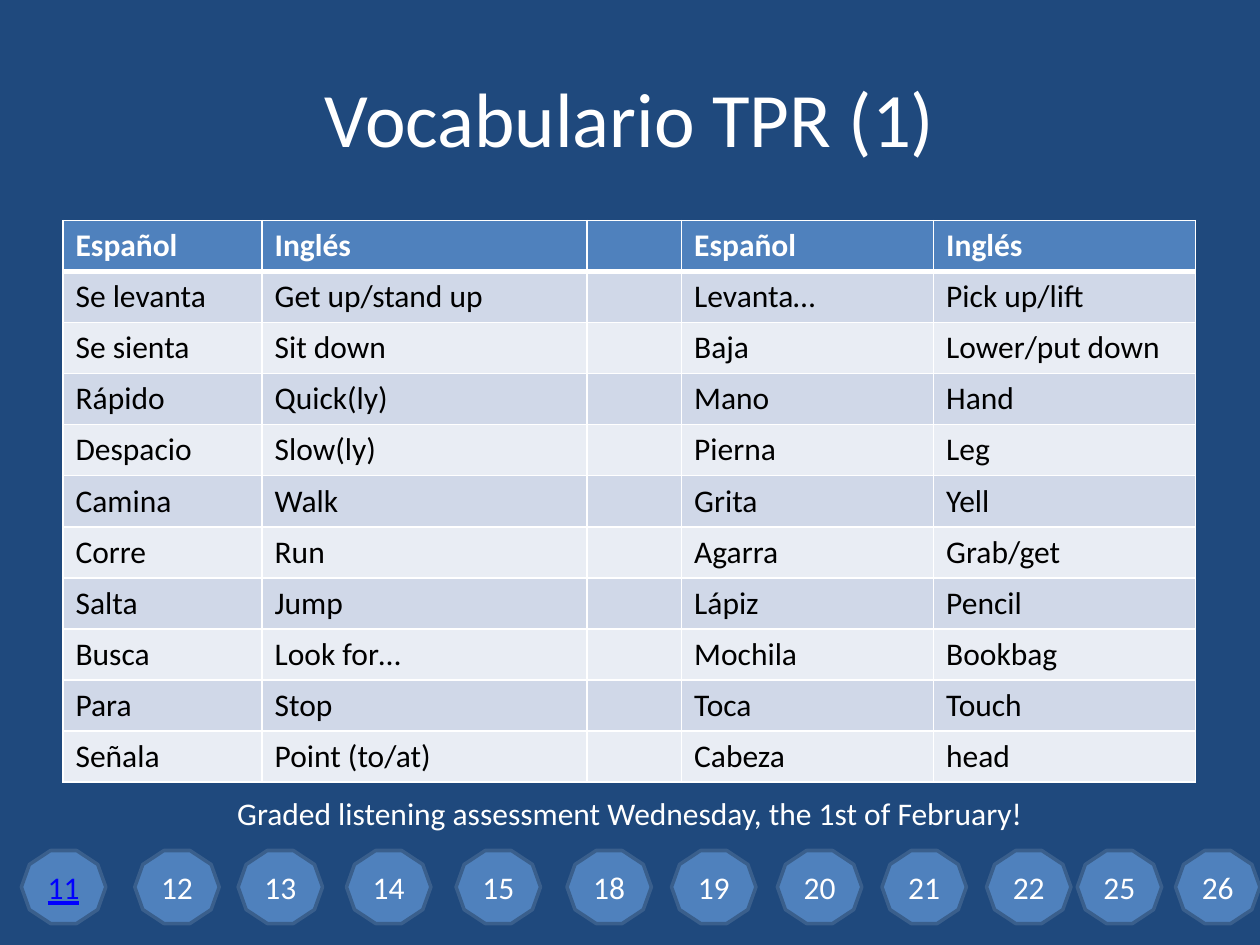
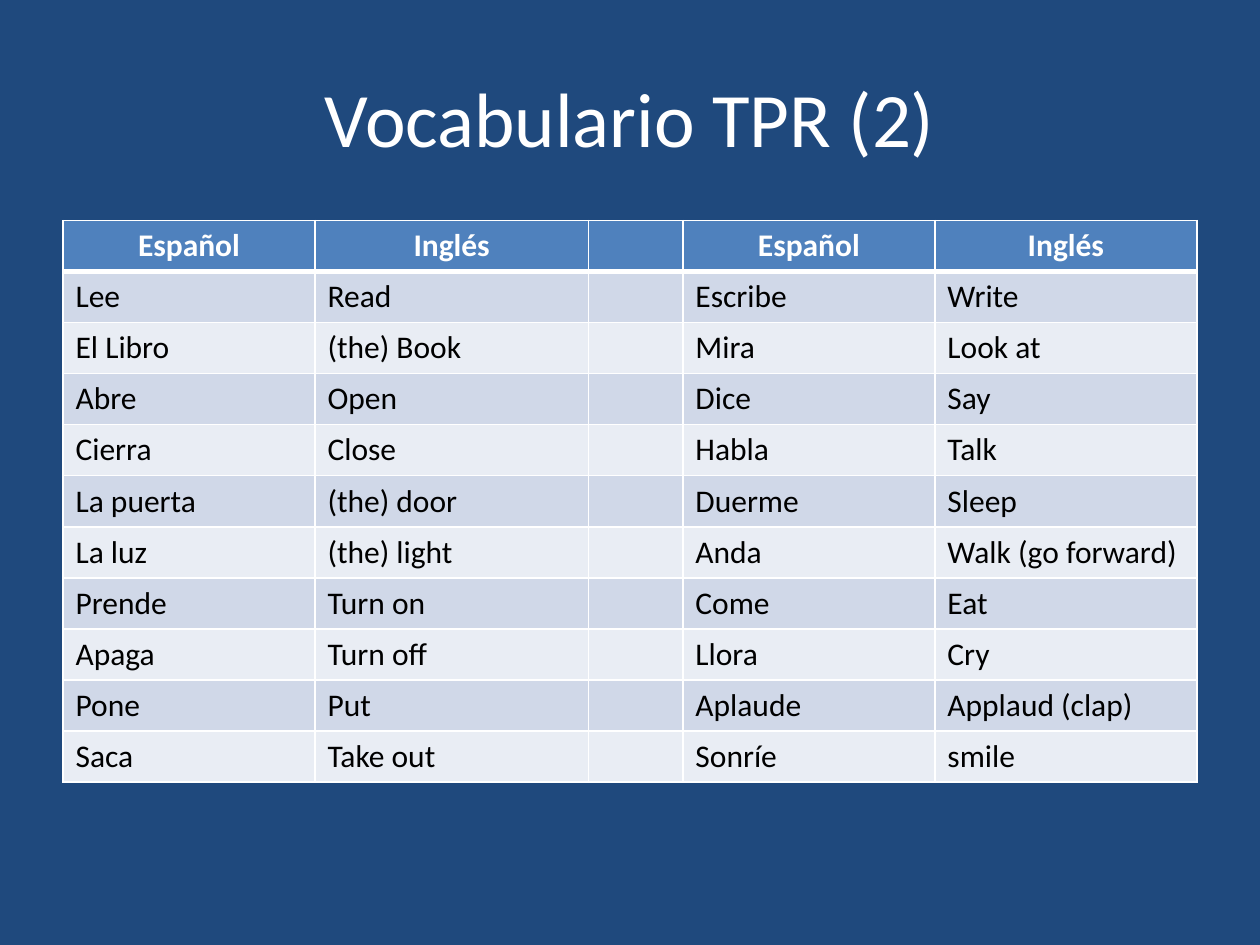
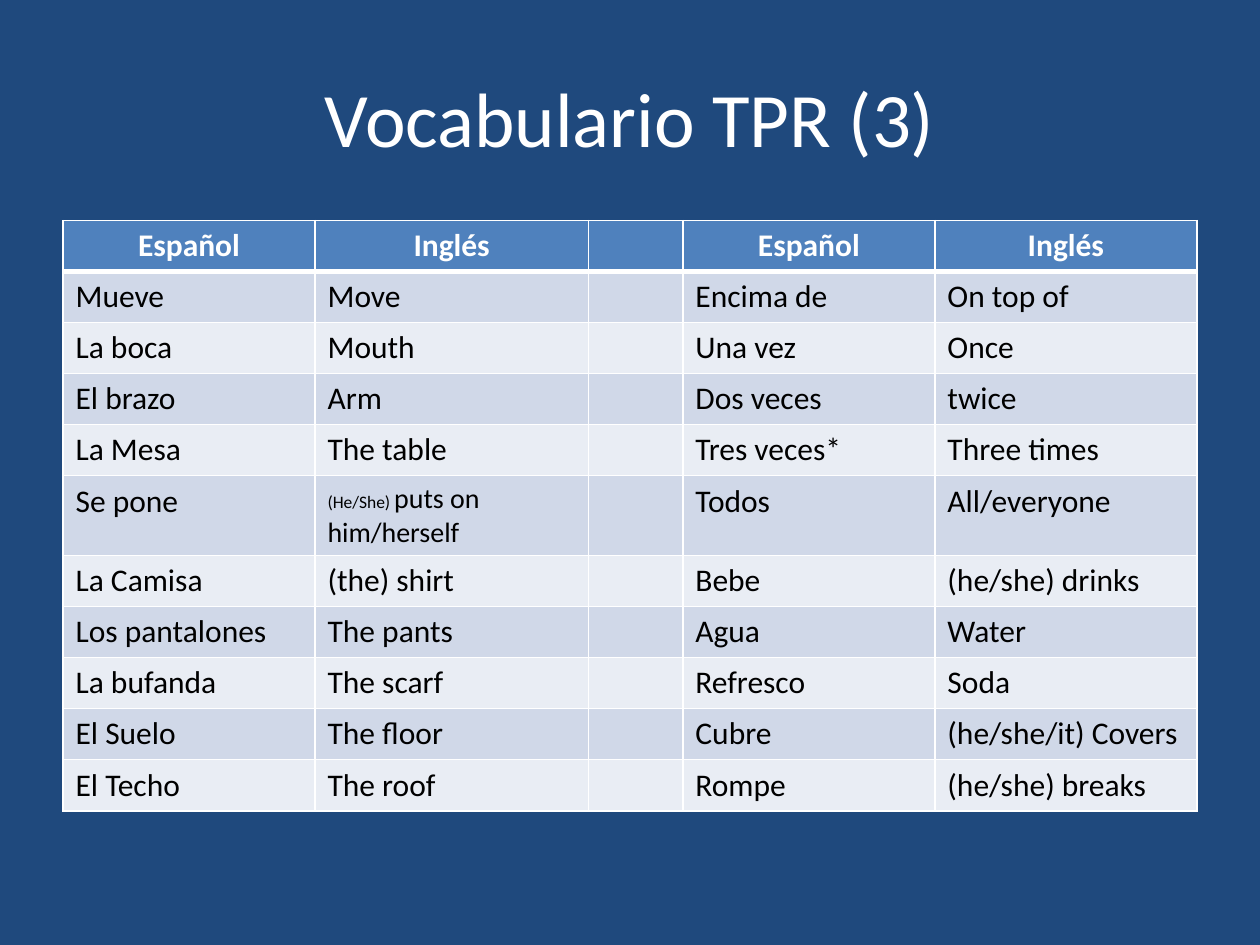
from lxml import etree
from pptx import Presentation
from pptx.dml.color import RGBColor
from pptx.enum.shapes import MSO_SHAPE
from pptx.enum.text import MSO_ANCHOR, PP_ALIGN
from pptx.oxml.ns import qn
from pptx.util import Inches, Pt

DECAGON = MSO_SHAPE.DECAGON
CENTER, LEFT = PP_ALIGN.CENTER, PP_ALIGN.LEFT
MIDDLE, TOP = MSO_ANCHOR.MIDDLE, MSO_ANCHOR.TOP

COLORS = {
    "back": "1F497D", "white": "FFFFFF", "black": "000000", "blue": "4F81BD",
    "edge": "3A5F8C", "link": "0000FF", "odd": "D0D8E8", "even": "E9EDF4",
}
FORMATS = {
    "title": {"size": Pt(44), "color": "white"},
    "note": {"size": Pt(18), "color": "white"},
    "head": {"size": Pt(18), "color": "white", "bold": True},
    "body": {"size": Pt(18), "color": "black", "bold": False},
    "link": {"size": Pt(18), "color": "link", "underline": True},
}
HEADS = ("Español", "Inglés", "", "Español", "Inglés")

BADGES = {
    "11": 0.17, "12": 1.07, "13": 1.89, "14": 2.75, "15": 3.62, "18": 4.5,
    "19": 5.33, "20": 6.17, "21": 7, "22": 7.83, "25": 8.55, "26": 9.33,
}

# Each word row: Spanish, English, Spanish, English.
# A cell may also be a list of (text, points) runs.
LESSONS = [
    {"title": "Vocabulario TPR (1)", "cols": (1.58, 2.58, 0.75, 2, 2.08), "align": LEFT, "words": [
        ("Se levanta", "Get up/stand up", "Levanta…", "Pick up/lift"),
        ("Se sienta", "Sit down", "Baja", "Lower/put down"),
        ("Rápido", "Quick(ly)", "Mano", "Hand"),
        ("Despacio", "Slow(ly)", "Pierna", "Leg"),
        ("Camina", "Walk", "Grita", "Yell"),
        ("Corre", "Run", "Agarra", "Grab/get"),
        ("Salta", "Jump", "Lápiz", "Pencil"),
        ("Busca", "Look for…", "Mochila", "Bookbag"),
        ("Para", "Stop", "Toca", "Touch"),
        ("Señala", "Point (to/at)", "Cabeza", "head"),
    ]},
    {"title": "Vocabulario TPR (2)", "cols": (2, 2.17, 0.75, 2, 2.08), "align": CENTER, "words": [
        ("Lee", "Read", "Escribe", "Write"),
        ("El Libro", "(the) Book", "Mira", "Look at"),
        ("Abre", "Open", "Dice", "Say"),
        ("Cierra", "Close", "Habla", "Talk"),
        ("La puerta", "(the) door", "Duerme", "Sleep"),
        ("La luz", "(the) light", "Anda", "Walk (go forward)"),
        ("Prende", "Turn on", "Come", "Eat"),
        ("Apaga", "Turn off", "Llora", "Cry"),
        ("Pone", "Put", "Aplaude", "Applaud (clap)"),
        ("Saca", "Take out", "Sonríe", "smile"),
    ]},
    {"title": "Vocabulario TPR (3)", "cols": (2, 2.17, 0.75, 2, 2.08), "align": CENTER, "words": [
        ("Mueve", "Move", "Encima de", "On top of"),
        ("La boca", "Mouth", "Una vez", "Once"),
        ("El brazo", "Arm", "Dos veces", "twice"),
        ("La Mesa", "The table", "Tres veces*", "Three times"),
        ("Se pone", [("(He/She) ", 10), ("puts on him/herself", 16)], "Todos", "All/everyone"),
        ("La Camisa", "(the) shirt", "Bebe", "(he/she) drinks"),
        ("Los pantalones", "The pants", "Agua", "Water"),
        ("La bufanda", "The scarf", "Refresco", "Soda"),
        ("El Suelo", "The floor", "Cubre", "(he/she/it) Covers"),
        ("El Techo", "The roof", "Rompe", "(he/she) breaks"),
    ]},
]


def rgb(name):
    return RGBColor.from_string(COLORS[name])


def paint(fill, name):
    fill.solid()
    fill.fore_color.rgb = rgb(name)


class Deck:
    """Holds the shared style and the slide being built."""

    font = "Calibri"

    def __init__(self):
        self.prs = Presentation()
        self.prs.slide_width, self.prs.slide_height = Inches(10), Inches(7.5)
        self.slide = None

    def page(self):
        self.slide = self.prs.slides.add_slide(self.prs.slide_layouts[6])
        paint(self.slide.background.fill, "back")

    def set_text(self, frame, text, style, align=CENTER):
        """Fill a text frame with one paragraph of one or more runs."""
        para = frame.paragraphs[0]
        para.alignment = align
        runs = [(text, None)] if isinstance(text, str) else text
        for part, size in runs:
            if not part:
                continue
            run = para.add_run()
            run.text = part
            run.font.name = self.font
            for key, value in FORMATS[style].items():
                if key == "color":
                    run.font.color.rgb = rgb(value)
                else:
                    setattr(run.font, key, value)
            if size:
                run.font.size = Pt(size)

    def label(self, text, style, top, height, anchor):
        box = self.slide.shapes.add_textbox(Inches(0.5), Inches(top), Inches(9), Inches(height))
        frame = box.text_frame
        frame.word_wrap = True
        frame.vertical_anchor = anchor
        self.set_text(frame, text, style)

    def badge(self, text, left, style):
        shape = self.slide.shapes.add_shape(
            DECAGON, Inches(left), Inches(6.75), Inches(0.67), Inches(0.58))
        shape.shadow.inherit = False
        paint(shape.fill, "blue")
        shape.line.color.rgb = rgb("edge")
        shape.line.width = Pt(2)
        shape.text_frame.vertical_anchor = MIDDLE
        self.set_text(shape.text_frame, text, style)

    def border(self, cell, top, bottom):
        """Draw white cell edges; top and bottom are widths in points."""
        props = cell._tc.get_or_add_tcPr()
        for side, width in (("L", 1), ("R", 1), ("T", top), ("B", bottom)):
            line = etree.SubElement(props, qn(f"a:ln{side}"), w=str(Pt(width)))
            fill = etree.SubElement(line, qn("a:solidFill"))
            etree.SubElement(fill, qn("a:srgbClr"), val=COLORS["white"])

    def table(self, words, cols, align):
        rows = [HEADS] + [(*pair[:2], "", *pair[2:]) for pair in words]
        grid = self.slide.shapes.add_table(
            len(rows), len(cols), Inches(0.5), Inches(1.75), Inches(9), Inches(4.46)).table
        for col, width in zip(grid.columns, cols):
            col.width = Inches(width)
        for r, row in enumerate(rows):
            band = "blue" if r == 0 else "odd" if r % 2 else "even"
            style = "body" if r else "head"
            for c, text in enumerate(row):
                cell = grid.cell(r, c)
                self.border(cell, 3 if r == 1 else 1, 1 if r else 3)
                paint(cell.fill, band)
                self.set_text(cell.text_frame, text, style, LEFT if r else align)


def main():
    deck = Deck()
    for index, lesson in enumerate(LESSONS):
        deck.page()
        deck.label(lesson["title"], "title", 0.3, 1.25, MIDDLE)
        deck.table(lesson["words"], lesson["cols"], lesson["align"])
        if index == 0:
            for text, left in BADGES.items():
                deck.badge(text, left, "link" if text == "11" else "note")
            deck.label("Graded listening assessment Wednesday, the 1st of February!",
                       "note", 6.25, 0.4, TOP)
    deck.prs.save("out.pptx")


if __name__ == "__main__":
    main()
